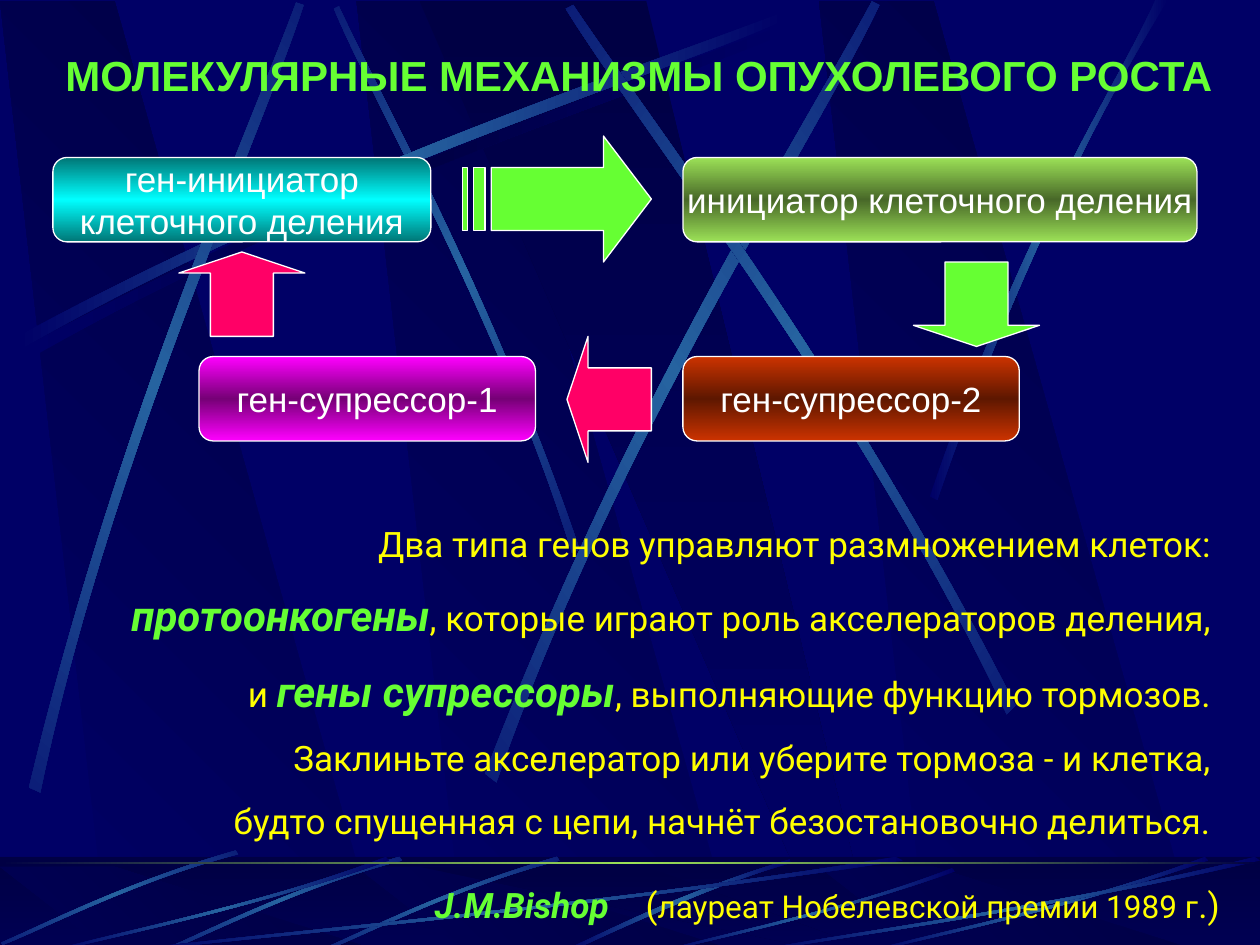
from dataclasses import dataclass
from math import cos, radians, sin

from pptx import Presentation
from pptx.dml.color import RGBColor
from pptx.enum.shapes import MSO_SHAPE
from pptx.enum.text import MSO_ANCHOR, MSO_AUTO_SIZE, PP_ALIGN
from pptx.oxml import parse_xml
from pptx.oxml.ns import nsdecls, qn
from pptx.util import Cm, Pt

RECTANGLE, ROUNDED = MSO_SHAPE.RECTANGLE, MSO_SHAPE.ROUNDED_RECTANGLE
UP, DOWN, LEFT = MSO_SHAPE.UP_ARROW, MSO_SHAPE.DOWN_ARROW, MSO_SHAPE.LEFT_ARROW
CENTER, RIGHT = PP_ALIGN.CENTER, PP_ALIGN.RIGHT
MIDDLE = MSO_ANCHOR.MIDDLE
FIT_SHAPE = MSO_AUTO_SIZE.SHAPE_TO_FIT_TEXT


@dataclass(frozen=True)
class Theme:
    background: str = "000066"
    deep: str = "000044"
    streak: str = "2663A0"
    white: str = "FFFFFF"
    yellow: str = "FFFF00"
    green: str = "66FF33"
    pink: str = "FF0066"
    lime: str = "9CE157"
    cyan: str = "00FFFF"
    rust: str = "CC3300"
    magenta: str = "FF00FF"
    heading_font: str = "Arial"
    body_font: str = "Roboto"
    large: int = 24
    normal: int = 20
    small: int = 18


THEME = Theme()
SHADE = '<a:gamma/><a:shade val="46275"/><a:invGamma/>'

# Each streak: two Bezier edges of four points, and its rotation in degrees
UPPER_STREAKS = [
    ([(4.6, 4.36), (3.91, 2.34), (3.02, 0.77), (2.69, 0.05),
      (2.65, 0.07), (2.95, 0.79), (3.98, 2.58), (4.54, 4.39)], 45),
    ([(0.14, 2.67), (2.78, 1.25), (5.18, 0.51), (6.2, 0.1),
      (6.23, 0.16), (5.22, 0.61), (2.48, 1.43), (0.17, 2.77)], 0),
    ([(0.23, 6.25), (0.93, 3.34), (1.97, 1.05), (2.35, 0.02),
      (2.41, 0.04), (2.07, 1.09), (0.86, 3.68), (0.32, 6.29)], 311.7),
    ([(3.85, 6.14), (4.98, 3.2), (6.38, 1.02), (6.92, 0.01),
      (6.98, 0.04), (6.49, 1.08), (4.86, 3.55), (3.94, 6.21)], 321.6),
    ([(8.06, 5.6), (6.7, 2.93), (5.16, 0.95), (4.55, 0.04),
      (4.49, 0.07), (5.07, 1.01), (6.85, 3.25), (7.99, 5.67)], 34.7),
    ([(7.38, 3.94), (8.14, 1.73), (8.88, 0.66), (9.17, 0),
      (9.27, 0), (8.36, 1.45), (7.69, 3.22), (7.44, 3.97)], 0),
]
SHADOW_STREAK = [(0.2, 2.75), (2.84, 1.34), (5.24, 0.59), (6.26, 0.18),
                 (6.29, 0.24), (5.28, 0.69), (2.54, 1.51), (0.23, 2.85)]
STEEP_STREAK = [(6.27, 6.82), (5.37, 7.09), (4.77, 7.42), (4.48, 7.54),
                (4.53, 7.55), (4.9, 7.38), (5.71, 7), (6.28, 6.85)]
TILTED_STREAK = [(4.42, 6.8), (3.55, 7.05), (2.87, 7.4), (2.56, 7.53),
                 (2.57, 7.55), (2.88, 7.43), (3.65, 7.03), (4.44, 6.83)]
# Shallow streaks share one outline: x is a fraction of width, y of height
SHALLOW_STREAK = [(1, 0.04), (0.57, 0.57), (0.17, 0.85), (0.01, 1),
                  (0, 0.99), (0.17, 0.81), (0.62, 0.51), (0.99, 0)]
SHALLOW_SPANS = [(1, 6.8, 6.17), (0.42, 6.8, 2.67), (5.27, 6.89, 2.31),
                 (6.92, 6.8, 2.67), (6, 6.8, 4)]
SLIDE_FOOT = 7.55


def inches(value):
    return Cm(value * 2.54)


def color(value):
    return RGBColor.from_string(value)


def paint(shape, fill, angle=90, outline=None):
    """Fill with one colour, or with a list of evenly spaced stops."""
    shape.shadow.inherit = False
    if outline:
        shape.line.color.rgb = color(outline)
        shape.line.width = Pt(0.75)
    else:
        shape.line.fill.background()
    if isinstance(fill, str):
        shape.fill.solid()
        shape.fill.fore_color.rgb = color(fill)
        return
    stops = "".join(
        f'<a:gs pos="{100000 * i // (len(fill) - 1)}"><a:srgbClr val="{value.lstrip("~")}">'
        f'{SHADE if value.startswith("~") else ""}</a:srgbClr></a:gs>'
        for i, value in enumerate(fill))  # "~" marks a shaded colour
    gradient = parse_xml(
        f'<a:gradFill {nsdecls("a")} rotWithShape="1"><a:gsLst>{stops}</a:gsLst>'
        f'<a:lin ang="{angle * 60000}" scaled="0"/></a:gradFill>')
    shape.fill.background()
    properties = shape._element.spPr
    properties.replace(properties.find(qn("a:noFill")), gradient)


def add_preset(slide, kind, left, top, width, height, fill, angle=90, outline=None):
    shape = slide.shapes.add_shape(kind, *map(inches, (left, top, width, height)))
    paint(shape, fill, angle, outline)
    return shape


def add_outline(slide, contours, fill, angle=90, outline=None):
    scaled = [[(inches(x), inches(y)) for x, y in points] for points in contours]
    builder = slide.shapes.build_freeform(*scaled[0][0], scale=1.0)
    for index, points in enumerate(scaled):
        if index:
            builder.move_to(*points[0])
        builder.add_line_segments(points[1:], close=True)
    shape = builder.convert_to_shape()
    paint(shape, fill, angle, outline)
    return shape


def bend(shape, line, points):
    """Turn a straight segment into a cubic curve through the given points."""
    nodes = "".join(f'<a:pt x="{inches(x) - shape.left}" y="{inches(y) - shape.top}"/>'
                    for x, y in points)
    curve = parse_xml(f'<a:cubicBezTo {nsdecls("a")}>{nodes}</a:cubicBezTo>')
    line.getparent().replace(line, curve)


def rotate(x, y, degrees):
    c, s = cos(radians(degrees)), sin(radians(degrees))
    return x * c - y * s, x * s + y * c


def add_streak(slide, points, rotation=0, middle=THEME.streak):
    level = [rotate(x, y, -rotation) for x, y in points]
    corners = [level[i] for i in (0, 3, 4, 7)]
    shape = add_outline(slide, [corners], [THEME.background, middle, THEME.background], 0)
    lines = list(shape._element.iter(qn("a:lnTo")))
    bend(shape, lines[0], level[1:4])
    bend(shape, lines[2], level[5:8])
    center_x, center_y = rotate(shape.left + shape.width / 2,
                                shape.top + shape.height / 2, rotation)
    shape.left = round(center_x - shape.width / 2)
    shape.top = round(center_y - shape.height / 2)
    shape.rotation = rotation


def add_panels(slide, top, bottom):
    fade = [THEME.background, THEME.deep]
    for x in (2.83, 0, 6.5):
        corners = [(x + 0.86, bottom), (x + 3.02, bottom), (x + 0.91, top), (x, top)]
        add_outline(slide, [corners], fade, 315)
    corners = [(3.33, top), (6.58, bottom), (6.94, bottom), (5.13, top)]
    add_outline(slide, [corners], fade[::-1])


def add_backdrop(slide):
    slide.background.fill.solid()
    slide.background.fill.fore_color.rgb = color(THEME.background)
    add_panels(slide, 0.01, 7.52)
    add_streak(slide, SHADOW_STREAK, middle=THEME.deep)
    for points, rotation in UPPER_STREAKS:
        add_streak(slide, points, rotation)
    # Footer band
    band = (0, 6.8, 10, 0.75)
    add_preset(slide, RECTANGLE, *band, [THEME.deep, THEME.background])
    add_panels(slide, 6.88, SLIDE_FOOT)
    veil = add_preset(slide, RECTANGLE, *band, THEME.deep)
    veil_color = veil._element.spPr.find(qn("a:solidFill"))[0]
    veil_color.append(parse_xml(f'<a:alpha {nsdecls("a")} val="50000"/>'))
    add_streak(slide, STEEP_STREAK)
    for dx, dy in ((0, 0), (-1.25, 0), (-2.55, -0.05)):
        add_streak(slide, [(x + dx, y + dy) for x, y in TILTED_STREAK], 315)
    for left, top, width in SHALLOW_SPANS:
        add_streak(slide, [(left + width * x, top + (SLIDE_FOOT - top) * y)
                           for x, y in SHALLOW_STREAK])
    add_preset(slide, RECTANGLE, 0, 6.84, 10, 0.02, [THEME.deep, THEME.lime, THEME.deep], 0)


def style(font, size, value, name=None, emphasis=None):
    font.size, font.color.rgb = Pt(size), color(value)
    if name:
        font.name = name
    if emphasis:
        font.bold = font.italic = True


def add_gene_box(slide, text, left, top, width, fill):
    shape = add_preset(slide, ROUNDED, left, top, width, 0.67, fill, outline=THEME.white)
    shape.adjustments[0] = 0.167
    frame = shape.text_frame
    frame.word_wrap, frame.vertical_anchor = False, MIDDLE
    frame.text = text
    for paragraph in frame.paragraphs:
        paragraph.alignment = CENTER
        style(paragraph.font, THEME.normal, THEME.white, THEME.heading_font)


def add_cycle(slide):
    for text, left, top, width, base in (
            ("инициатор клеточного деления", 5.42, 1.25, 4.08, THEME.lime),
            ("ген-супрессор-2", 5.42, 2.83, 2.67, THEME.rust),
            ("ген-супрессор-1", 1.58, 2.83, 2.67, THEME.magenta)):
        add_gene_box(slide, text, left, top, width, [base, "~" + base, base])
    add_gene_box(slide, "ген-инициатор\nклеточного деления", 0.42, 1.25, 3,
                 ["~" + THEME.cyan, THEME.cyan, "~" + THEME.cyan])
    for kind, left, top, width, height, fill in (
            (DOWN, 7.25, 2.08, 1, 0.67, THEME.green),
            (UP, 1.42, 2, 1, 0.67, THEME.pink),
            (LEFT, 4.5, 2.67, 0.67, 1, THEME.pink)):
        arrow = add_preset(slide, kind, left, top, width, height, fill, outline=THEME.white)
        arrow.adjustments[0], arrow.adjustments[1] = 0.5, 0.25
    # Striped arrow
    head = [(4.79, 1.08), (4.79, 1.33), (3.9, 1.33), (3.9, 1.83),
            (4.79, 1.83), (4.79, 2.08), (5.17, 1.58)]
    stripes = [[(a, 1.33), (a, 1.83), (b, 1.83), (b, 1.33)]
               for a, b in ((3.76, 3.85), (3.67, 3.71))]
    add_outline(slide, [head, *stripes], THEME.green, outline=THEME.white)


def add_text(slide, left, top, width, height):
    return slide.shapes.add_textbox(*map(inches, (left, top, width, height))).text_frame


def add_title(slide):
    frame = add_text(slide, 0.42, 0.34, 9.38, 0.5)
    frame.word_wrap, frame.auto_size = False, FIT_SHAPE
    paragraph = frame.paragraphs[0]
    paragraph.text = "МОЛЕКУЛЯРНЫЕ МЕХАНИЗМЫ ОПУХОЛЕВОГО РОСТА"
    style(paragraph.font, THEME.large, THEME.green, THEME.heading_font)
    paragraph.font.bold = True


def add_explanation(slide):
    plain = (THEME.normal, THEME.yellow)
    term = (THEME.large, THEME.green, THEME.body_font, True)
    author = (THEME.normal, *term[1:])
    lines = [
        [("Два типа генов управляют размножением клеток: ", plain)],
        [("протоонкогены", term), (", которые играют роль акселераторов деления, ", plain)],
        [("и ", plain), ("гены супрессоры", term),
         (", выполняющие функцию тормозов. ", plain)],
        [("Заклиньте акселератор или уберите тормоза - и клетка, ", plain)],
        [("будто спущенная с цепи, начнёт безостановочно делиться. ", plain)],
        [("J.M.Bishop", author), (" ", author), ("(", plain),
         ("лауреат Нобелевской премии 1989 г", (THEME.small, THEME.yellow)), (".)", plain)],
    ]
    frame = add_text(slide, 0.67, 3.93, 9.11, 3.46)
    frame.word_wrap = True
    for index, line in enumerate(lines):
        paragraph = frame.paragraphs[0] if index == 0 else frame.add_paragraph()
        paragraph.alignment, paragraph.line_spacing = RIGHT, 1.5
        for text, look in line:
            run = paragraph.add_run()
            run.text = text
            run.font.name = THEME.body_font
            style(run.font, *look)
    # Author line: set apart, with a widened gap after the name
    paragraph.line_spacing, paragraph.space_before = 1.0, Pt(24)
    paragraph.runs[1].font._element.set("spc", "1600")


def main():
    presentation = Presentation()
    presentation.slide_width, presentation.slide_height = inches(10), inches(7.5)
    slide = presentation.slides.add_slide(presentation.slide_layouts[6])
    add_backdrop(slide)
    add_explanation(slide)
    add_title(slide)
    add_cycle(slide)
    presentation.save("out.pptx")


if __name__ == "__main__":
    main()
